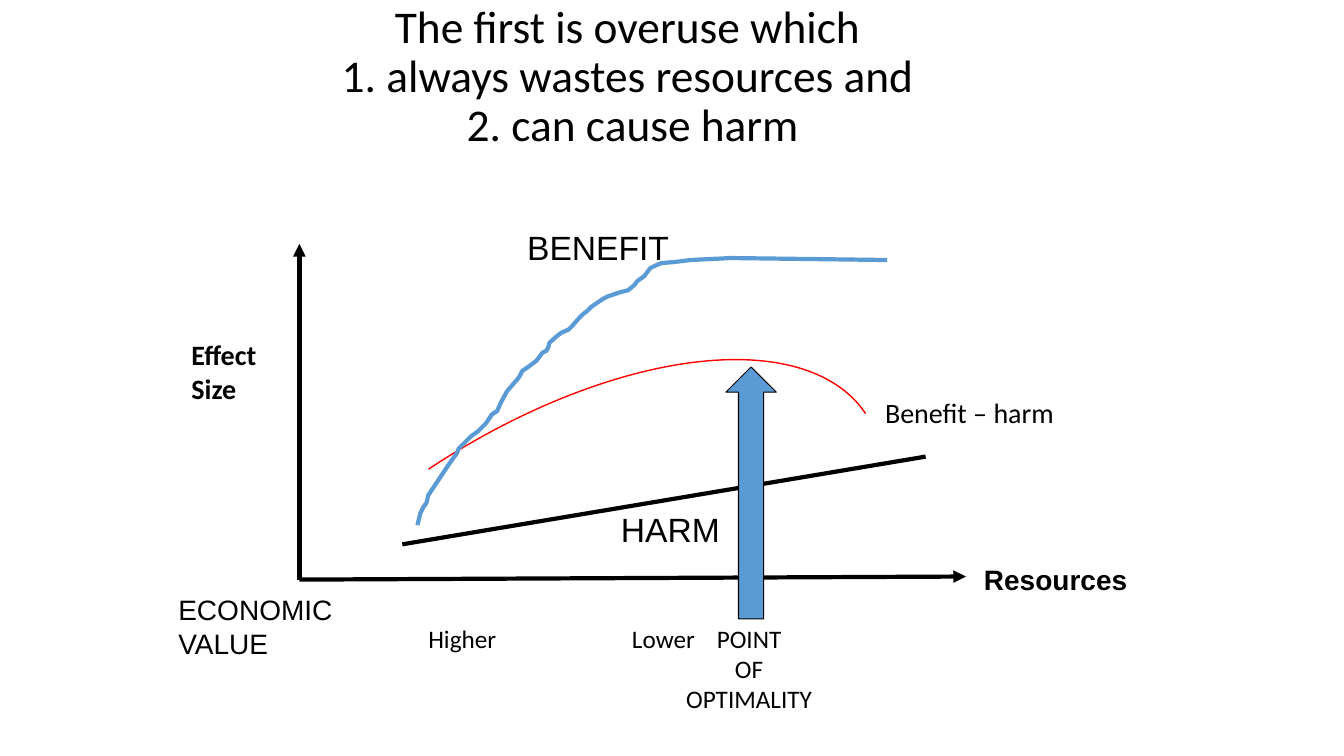
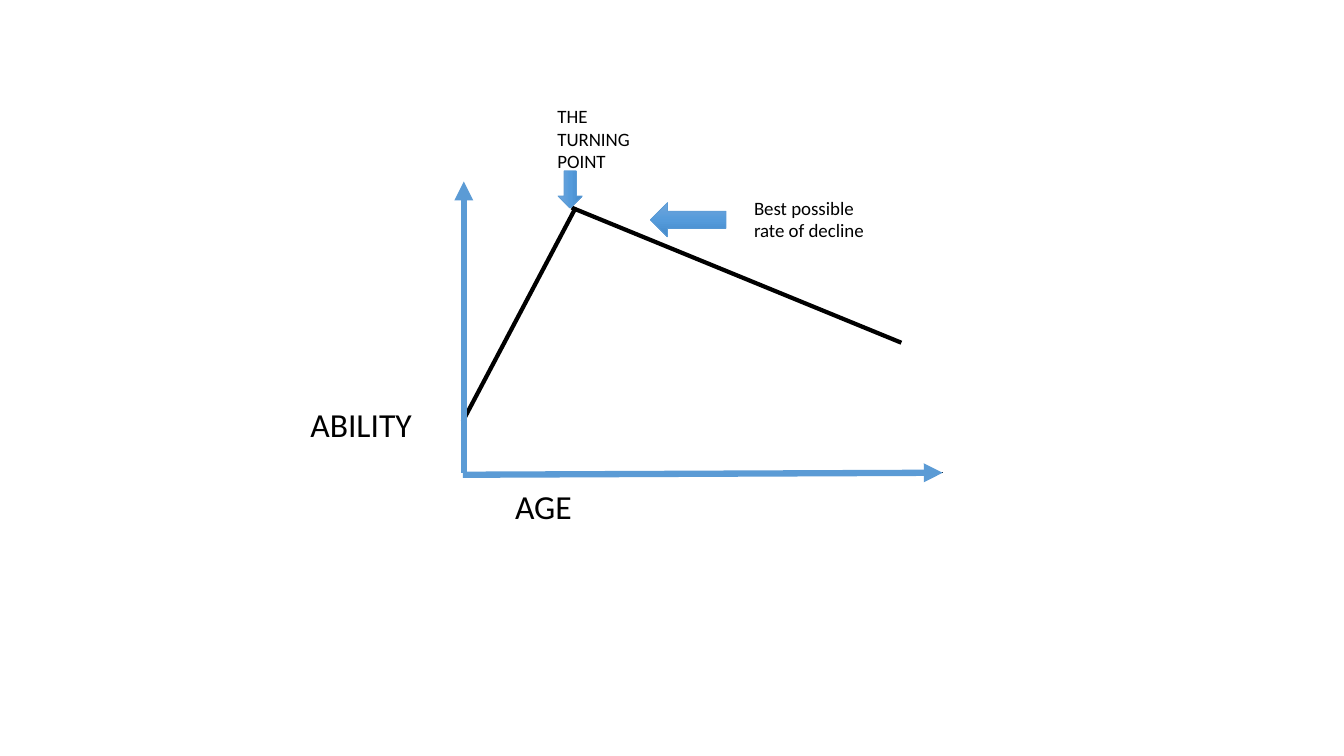
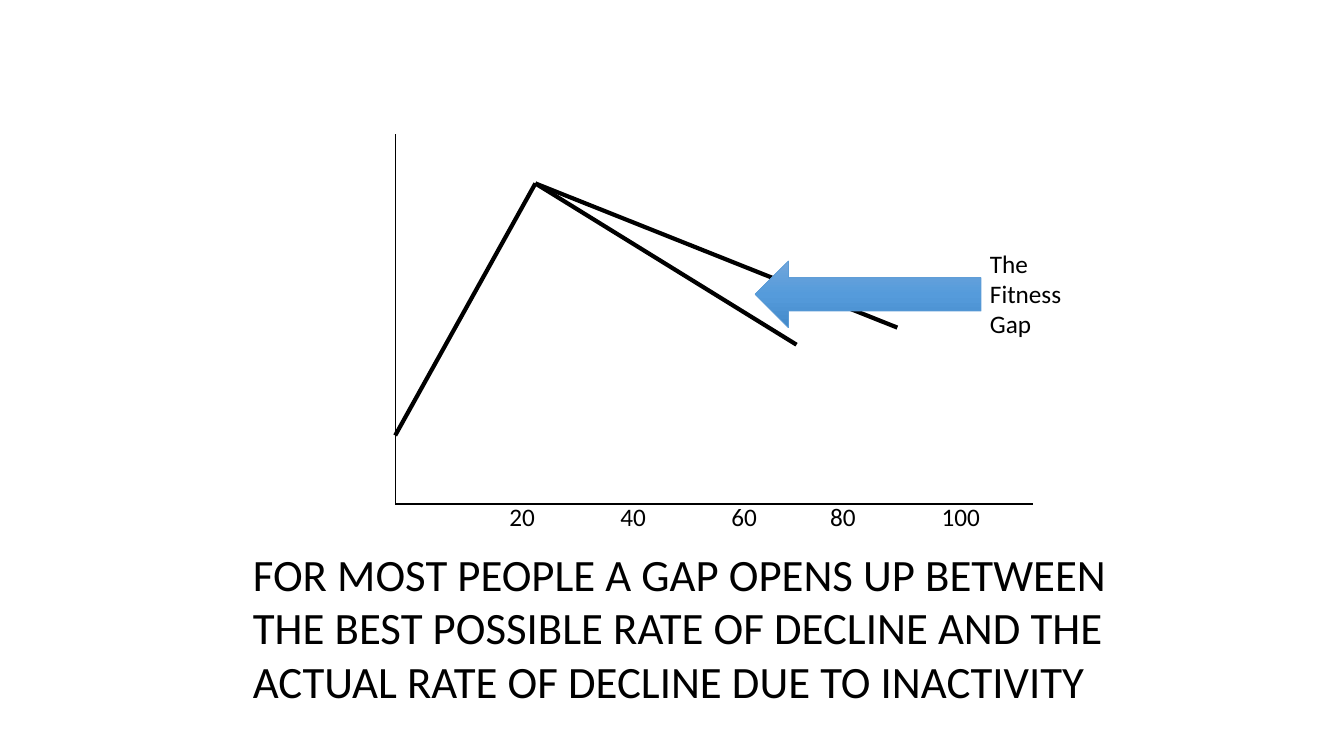
from copy import deepcopy
from lxml.etree import SubElement as Sub
from pptx import Presentation
from pptx.dml.color import RGBColor as Rgb
from pptx.enum.shapes import MSO_CONNECTOR as Link, MSO_SHAPE as Form
from pptx.enum.text import MSO_ANCHOR as Anchor, MSO_AUTO_SIZE as Fit, PP_ALIGN as Align
from pptx.oxml.ns import qn
from pptx.util import Pt

PX = 9144
SIZE = (1333, 750)
HUES = {"ink": "000000", "blue": "5B9BD5", "red": "FF0000",
        "top": "71A6DB", "mid": "559BDB", "low": "448ACA"}
BLEND = ("top", "mid", "low")

HEAD = ("The first is overuse which \v1. always wastes resources and \v2. can cause harm",
        (180, 26, 895, 129))
ARC = (141, 433, 783, 388)
TURN = 326.4
POINTER = (720, 364, 50, 250)
GAIN = [
    (414, 521), (417, 509), (420, 503), (423, 499), (425, 491), (445, 461),
    (450, 454), (453, 450), (455, 445), (464, 436), (467, 433), (474, 428),
    (482, 420), (488, 411), (493, 408), (497, 399), (503, 388), (510, 380),
    (515, 374), (518, 368), (524, 364), (532, 358), (538, 350), (542, 348),
    (544, 344), (545, 340), (553, 333), (557, 330), (564, 327), (567, 324),
    (574, 316), (578, 312), (583, 308), (587, 304), (599, 296), (603, 294),
    (615, 290), (623, 288), (629, 283), (632, 279), (639, 274), (645, 266),
    (649, 264), (656, 261), (669, 260), (685, 258), (725, 256), (880, 258),
]

AXIS = {"width": 3, "arrow": True}
BOLD = {"width": 3}
BAND = {"width": 4.5, "hue": "blue", "arrow": True}
THIN = {"width": 0.75}
MID = {"align": Align.CENTER}

OVERUSE = {
    "lines": [((297, 575), (297, 242), AXIS),
              ((297, 575), (958, 572), AXIS),
              ((399, 540), (918, 453), BOLD)],
    "labels": [("Higher", (415, 613, 100, 40), 18, {}),
               ("Lower", (617, 613, 90, 40), 18, {}),
               ("POINT\nOF\nOPTIMALITY", (663, 613, 160, 101), 18, MID),
               ("BENEFIT", (513, 220, 220, 48), 24, {"font": "Arial"}),
               ("HARM", (606, 500, 130, 48), 24, {"font": "Arial"}),
               ("Resources", (966, 553, 179, 46), 20, {"font": "Arial", "bold": True}),
               ("ECONOMIC\nVALUE", (167, 583, 173, 77), 20, {"font": "Arial"}),
               ("Benefit – harm", (868, 387, 237, 44), 20, {}),
               ("Effect\nSize", (180, 330, 102, 77), 20, {"bold": True})],
}
TURNING = {
    "lines": [((460, 469), (935, 469), THIN),
              ((567, 206), (894, 340), BOLD),
              ((571, 206), (459, 418), BOLD),
              ((460, 469), (460, 180), BAND),
              ((459, 471), (935, 469), BAND)],
    "labels": [("Best possible rate of decline", (738, 190, 142, 56), 13.5, {}),
               ("ABILITY", (298, 396, 150, 50), 24, {}),
               ("AGE", (501, 477, 100, 50), 24, {}),
               ("THE\nTURNING\nPOINT", (543, 99, 102, 78), 13.5, {})],
    "arrows": [((547, 176, 37, 24), 270), ((645, 201, 75, 34), 0)],
}
PEAK = (531, 182)
TICKS = {20: 518, 40: 628, 60: 738, 80: 836, 100: 953}
FITNESS = {
    "lines": [((392, 133), (392, 500), THIN),
              ((392, 500), (1025, 500), THIN)]
             + [(PEAK, end, BOLD) for end in ((392, 432), (890, 325), (790, 342))],
    "labels": [(str(age), (mid - 30, 492, 60, 40), 18, MID) for age, mid in TICKS.items()]
              + [("The\nFitness\nGap", (972, 241, 115, 101), 18, {}),
                 ("FOR MOST PEOPLE A GAP OPENS UP BETWEEN THE BEST POSSIBLE RATE OF DECLINE "
                  "AND THE ACTUAL RATE OF DECLINE DUE TO INACTIVITY",
                  (241, 537, 924, 172), 32, {})],
    "arrows": [((749, 259, 224, 66), 0)],
}


def emu(vals):
    return [val * PX for val in vals]


def hue(name):
    return Rgb.from_string(HUES[name])


def write(frame, text, size, font="Calibri", bold=False, align=Align.LEFT, space=None):
    frame.word_wrap = True
    frame.auto_size = Fit.NONE
    frame.text = text
    for para in frame.paragraphs:
        para.alignment = align
        para.line_spacing = space
        for run in para.runs:
            run.font.name = font
            run.font.size = Pt(size)
            run.font.bold = bold
            run.font.color.rgb = hue("ink")


def stroke(shape, name, width):
    shape.line.color.rgb = hue(name)
    shape.line.width = Pt(width)


def rule(slide, start, end, width, hue="ink", arrow=False):
    line = slide.shapes.add_connector(Link.STRAIGHT, *emu(start + end))
    stroke(line, hue, width)
    props = line._element.spPr
    if arrow:
        Sub(props.find(qn("a:ln")), qn("a:tailEnd"), type="triangle")
    Sub(props, qn("a:effectLst"))


def draw(slide, form, box, name, width, fill=None):
    shape = slide.shapes.add_shape(form, *emu(box))
    finish(shape, name, width, fill)
    return shape


def finish(shape, name, width, fill=None):
    shape.shadow.inherit = False
    stroke(shape, name, width)
    if fill:
        shape.fill.solid()
        shape.fill.fore_color.rgb = hue(fill)
    else:
        shape.fill.background()


def shade(shape):
    fill = shape.fill
    fill.gradient()
    fill.gradient_angle = 270
    stops = shape._element.spPr.find(".//" + qn("a:gsLst"))
    stops.insert(1, deepcopy(stops[0]))
    for step, (stop, name) in enumerate(zip(fill.gradient_stops, BLEND)):
        stop.position = step / 2
        stop.color.rgb = hue(name)


def plot(slide, lines, labels, arrows=()):
    for start, end, look in lines:
        rule(slide, start, end, **look)
    for box, turn in arrows:
        shape = draw(slide, Form.LEFT_ARROW, box, "blue", 0.5)
        shape.rotation = turn
        shade(shape)
    for text, box, size, look in labels:
        write(slide.shapes.add_textbox(*emu(box)).text_frame, text, size, **look)


def head(slide, text, box):
    title = slide.shapes.title
    title.left, title.top, title.width, title.height = emu(box)
    write(title.text_frame, text, 32.4, align=Align.CENTER, space=0.9)
    title.text_frame.vertical_anchor = Anchor.BOTTOM


def curves(slide):
    draw(slide, Form.UP_ARROW, POINTER, "ink", 0.75, "blue")
    draw(slide, Form.ARC, ARC, "red", 1).rotation = TURN
    path = slide.shapes.build_freeform(*GAIN[0], scale=PX)
    path.add_line_segments(GAIN[1:], close=False)
    finish(path.convert_to_shape(), "blue", 3)


def main():
    deck = Presentation()
    deck.slide_width, deck.slide_height = emu(SIZE)
    titled, blank = deck.slide_layouts[5], deck.slide_layouts[6]
    first = deck.slides.add_slide(titled)
    head(first, *HEAD)
    plot(first, **OVERUSE)
    curves(first)
    for part in (TURNING, FITNESS):
        plot(deck.slides.add_slide(blank), **part)
    deck.save("out.pptx")


if __name__ == "__main__":
    main()
